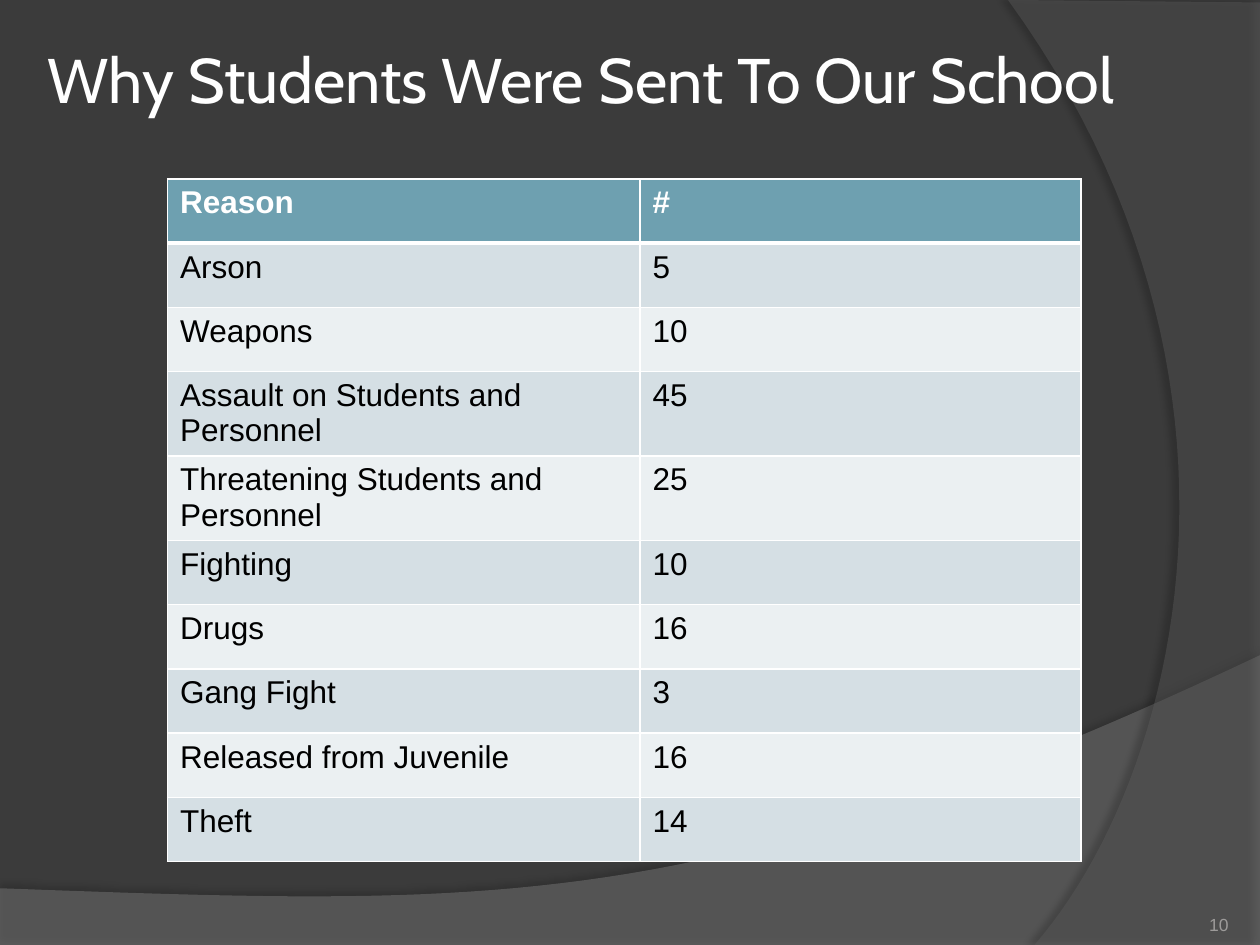
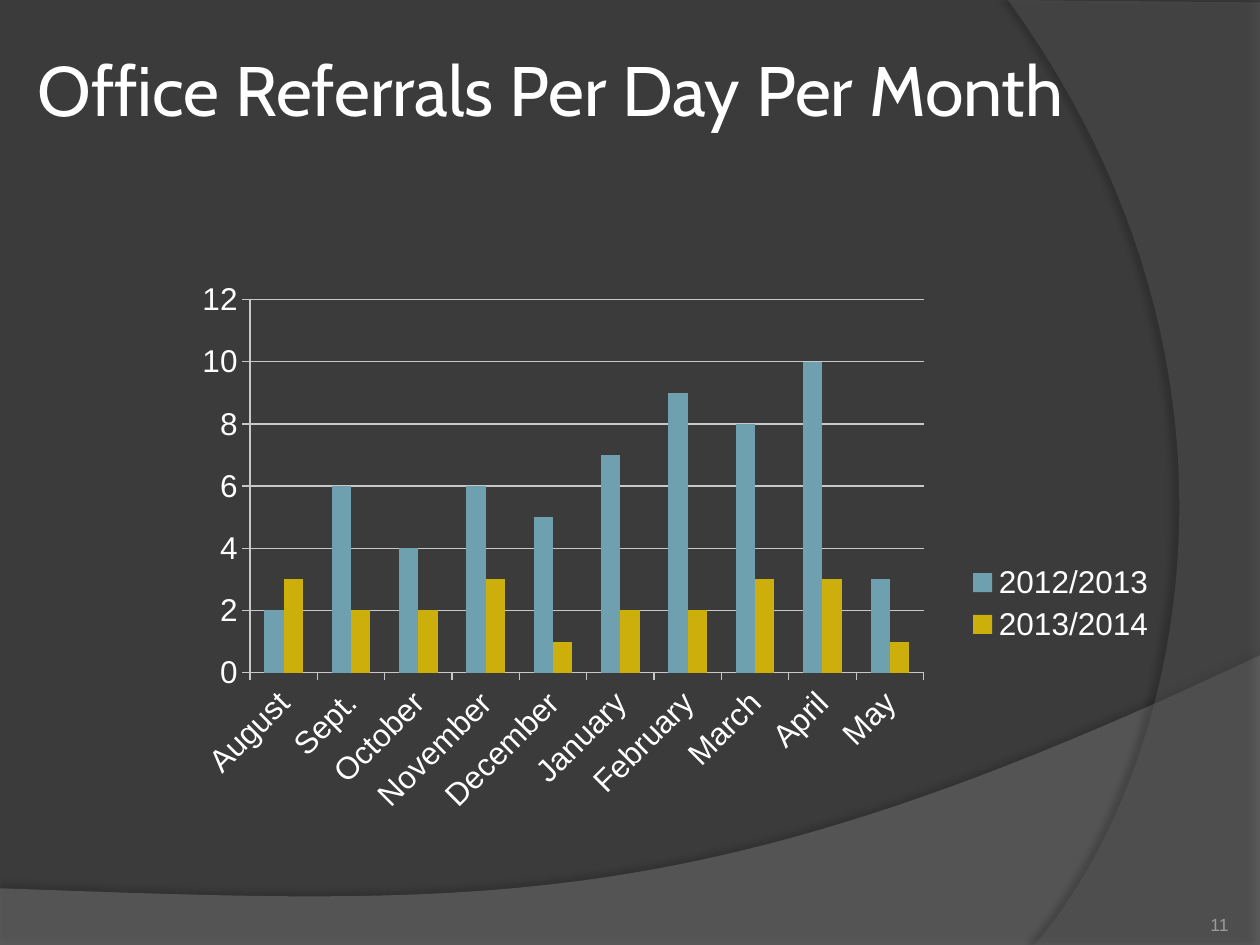
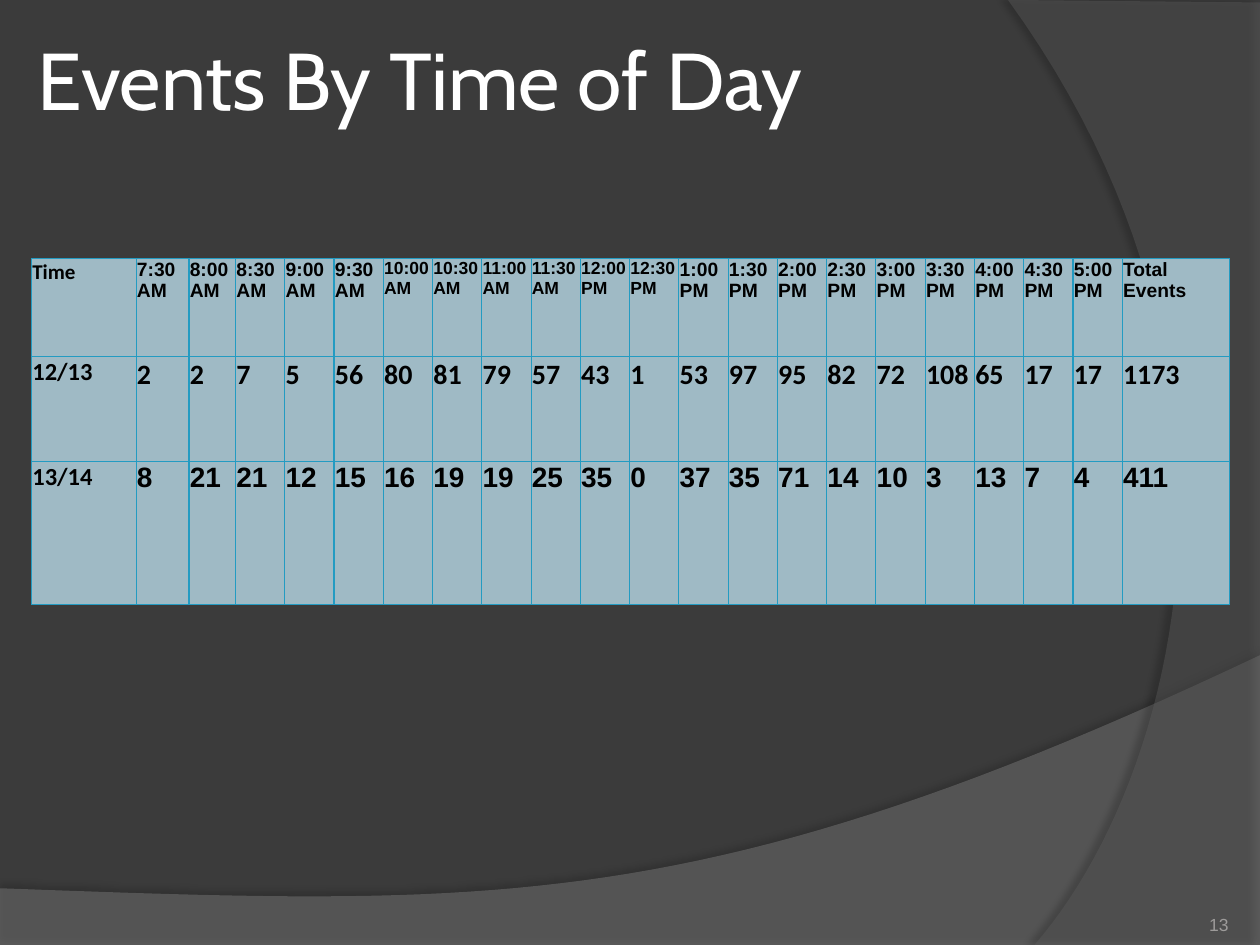
import lxml.etree
import pptx
import pptx.chart.data
import pptx.dml.color
import pptx.enum.chart
import pptx.enum.text
import pptx.oxml
import pptx.oxml.ns
import pptx.util

Inches = pptx.util.Inches
Pt = pptx.util.Pt
RGB = pptx.dml.color.RGBColor.from_string
qn = pptx.oxml.ns.qn
NAMESPACES = pptx.oxml.ns.nsdecls("a", "c")

COLORS = {
    "background": "3B3B3B", "floor": "7F7F7F", "side": "5E5E5E",
    "white": "FFFFFF", "black": "000000", "number": "9D9B9A",
    "teal": "6EA0B0", "gold": "CCAF0A", "grid": "C8C8C8",
    "band_dark": "D5DFE4", "band_light": "EBF0F2",
    "schedule": "9FBAC5", "schedule_line": "239BC2",
}


def write_text(frame, text, size=18, font="Arial", color="white", bold=False,
               align="LEFT", anchor="TOP", inset=None):
    """Fill a text frame; inset gives left, top, right and bottom in inches."""
    frame.word_wrap = True
    frame.vertical_anchor = getattr(pptx.enum.text.MSO_ANCHOR, anchor)
    if inset:
        (frame.margin_left, frame.margin_top,
         frame.margin_right, frame.margin_bottom) = [Inches(side) for side in inset]
    para = frame.paragraphs[0]
    para.alignment = getattr(pptx.enum.text.PP_ALIGN, align)
    span = para.add_run()
    span.text = text
    span.font.size = Pt(size)
    span.font.name = font
    span.font.bold = bold
    span.font.color.rgb = RGB(COLORS[color])


def paint_cell(cell, fill, line, width, **edges):
    """Set fill and borders; edges (L, R, T, B) override the border width."""
    cell.fill.solid()
    cell.fill.fore_color.rgb = RGB(COLORS[fill])
    properties = cell._tc.get_or_add_tcPr()
    for position, edge in enumerate("LRTB"):
        properties.insert(position, pptx.oxml.parse_xml(
            f'<a:ln{edge} {NAMESPACES} w="{Pt(edges.get(edge, width))}"><a:solidFill>'
            f'<a:srgbClr val="{COLORS[line]}"/></a:solidFill></a:ln{edge}>'))


deck = pptx.Presentation()
deck.slide_width, deck.slide_height = Inches(10), Inches(7.5)

# Each band: colour, opacity, shadow opacity, distance and angle,
# corners before the curve, Bezier control points (the first is the last corner)
bands = [
    ("floor", 45, 35, 3.5, 270, [(0, 7.05), (0, 7.51), (10, 7.51)],
     [(10, 5.2), (5.59, 7.29), (3.91, 7.19), (0, 7.05)]),
    ("side", 40, 45, 4, 180, [(10, 0.02), (10, 7.5)],
     [(8.21, 7.5), (9.35, 6.19), (10.18, 3), (8, 0)]),
]
titles = [
    ("Why Students Were Sent To Our School", 36, 0.33, 0, 9, "10"),
    ("Office Referrals Per Day Per Month", 40, 0.25, 0.08, 9, "11"),
    ("Events By Time of Day", 46, 0.25, 0, 8.17, "13"),
]
CURVE_STEPS = 48

pages = []
for title, size, left, top, width, number in titles:
    page = deck.slides.add_slide(deck.slide_layouts[6])
    pages.append(page)
    page.background.fill.solid()
    page.background.fill.fore_color.rgb = RGB(COLORS["background"])

    for color, opacity, shade, distance, angle, corners, controls in bands:
        curve = []
        for step in range(CURVE_STEPS + 1):
            t = step / CURVE_STEPS
            weights = ((1 - t) ** 3, 3 * t * (1 - t) ** 2, 3 * t * t * (1 - t), t ** 3)
            curve.append([sum(weight * point[axis] for weight, point in zip(weights, controls))
                          for axis in (0, 1)])
        # The builder keeps whole units only, so points are given in EMU
        outline = [(Inches(x), Inches(y)) for x, y in corners + curve]
        builder = page.shapes.build_freeform(*outline[0])
        builder.add_line_segments(outline[1:], close=True)
        band = builder.convert_to_shape()
        band.fill.solid()
        band.fill.fore_color.rgb = RGB(COLORS[color])
        band.line.fill.background()
        fill_color = band._element.spPr.find(qn("a:solidFill"))[0]
        lxml.etree.SubElement(fill_color, qn("a:alpha"), val=str(opacity * 1000))
        band._element.spPr.append(pptx.oxml.parse_xml(
            f'<a:effectLst {NAMESPACES}><a:outerShdw blurRad="{Pt(4)}" dist="{Pt(distance)}" '
            f'dir="{angle * 60000}" algn="ctr" rotWithShape="0">'
            f'<a:srgbClr val="{COLORS["black"]}"><a:alpha val="{shade * 1000}"/></a:srgbClr>'
            '</a:outerShdw></a:effectLst>'))

    box = page.shapes.add_textbox(Inches(left), Inches(top), Inches(width), Inches(1.25))
    write_text(box.text_frame, title, size=size, font="Cabin", anchor="MIDDLE", inset=[0.05] * 4)
    box = page.shapes.add_textbox(Inches(8.92), Inches(7.02), Inches(0.83), Inches(0.4))
    write_text(box.text_frame, number, size=10, color="number", align="RIGHT",
               anchor="BOTTOM", inset=[0] * 4)

reasons_page, referrals_page, events_page = pages

# Reasons
reasons = [
    ("Reason", "#"), ("Arson", "5"), ("Weapons", "10"),
    ("Assault on Students and Personnel", "45"),
    ("Threatening Students and Personnel", "25"),
    ("Fighting", "10"), ("Drugs", "16"), ("Gang Fight", "3"),
    ("Released from Juvenile", "16"), ("Theft", "14"),
]
table = reasons_page.shapes.add_table(
    len(reasons), 2, Inches(1.33), Inches(1.42), Inches(7.25), Inches(5.42)).table
table.first_row = table.horz_banding = False
table.columns[0].width, table.columns[1].width = Inches(3.75), Inches(3.5)
for row, entry in enumerate(reasons):
    table.rows[row].height = Inches(0.67 if "Personnel" in entry[0] else 0.51)
    header = row == 0
    fill = "teal" if header else ("band_dark" if row % 2 else "band_light")
    edges = {0: {"B": 3}, 1: {"T": 3}}.get(row, {})
    for column, text in enumerate(entry):
        cell = table.cell(row, column)
        write_text(cell.text_frame, text, color="white" if header else "black", bold=header)
        cell.margin_bottom = Inches(0.01)
        paint_cell(cell, fill, "white", 1, **edges)

# Referrals
data = pptx.chart.data.CategoryChartData()
data.categories = ["August", "Sept.", "October", "November", "December",
                   "January", "February", "March", "April", "May"]
data.add_series("2012/2013", [2, 6, 4, 6, 5, 7, 9, 8, 10, 3])
data.add_series("2013/2014", [3, 2, 2, 3, 1, 2, 2, 3, 3, 1])
chart = referrals_page.shapes.add_chart(
    pptx.enum.chart.XL_CHART_TYPE.COLUMN_CLUSTERED,
    Inches(0.83), Inches(2.08), Inches(8.42), Inches(4.44), data).chart
chart.has_title = False
chart.font.size = Pt(18)
chart.font.name = "Arial"
chart.font.color.rgb = RGB(COLORS["white"])
plot = chart.plots[0]
plot.gap_width, plot.overlap, plot.vary_by_categories = 150, 0, False
for series, color in zip(plot.series, ("teal", "gold")):
    series.invert_if_negative = False
    series.format.fill.solid()
    series.format.fill.fore_color.rgb = RGB(COLORS[color])

value_axis, category_axis = chart.value_axis, chart.category_axis
value_axis.minimum_scale, value_axis.maximum_scale, value_axis.major_unit = 0, 12, 2
value_axis.has_major_gridlines = True
for axis in (value_axis, category_axis):
    axis.major_tick_mark = pptx.enum.chart.XL_TICK_MARK.OUTSIDE
for part in (value_axis, category_axis, value_axis.major_gridlines):
    part.format.line.color.rgb = RGB(COLORS["grid"])
    part.format.line.width = Pt(0.75)

chart.has_legend = True
chart.legend.position = pptx.enum.chart.XL_LEGEND_POSITION.RIGHT
chart.legend.include_in_layout = False
for parent, position, target, places in (
        (chart._chartSpace.chart.plotArea, 0, '<c:layoutTarget val="inner"/>',
         {"x": 0.137, "y": 0.067, "w": 0.635, "h": 0.667}),
        (chart.legend._element, 1, "", {"x": 0.809, "y": 0.53})):
    for layout in parent.findall(qn("c:layout")):
        parent.remove(layout)
    modes = "".join(f'<c:{key}Mode val="edge"/>' for key in "xy")
    values = "".join(f'<c:{key} val="{value}"/>' for key, value in places.items())
    parent.insert(position, pptx.oxml.parse_xml(
        f'<c:layout {NAMESPACES}><c:manualLayout>{target}{modes}{values}'
        '</c:manualLayout></c:layout>'))

# Events, in half hours from 7:30 AM to 5:00 PM
times = [f"{(half // 2 - 1) % 12 + 1}:{half % 2 * 30:02d} {'AM' if half < 24 else 'PM'}"
         for half in range(15, 35)]
events = [
    ["Time", *times, "Total Events"],
    ["12/13", 2, 2, 7, 5, 56, 80, 81, 79, 57, 43, 1, 53, 97, 95, 82, 72, 108, 65, 17, 17, 1173],
    ["13/14", 8, 21, 21, 12, 15, 16, 19, 19, 25, 35, 0, 37, 35, 71, 14, 10, 3, 13, 7, 4, 411],
]
table = events_page.shapes.add_table(
    3, len(events[0]), Inches(0.25), Inches(2.05), Inches(9.51), Inches(2.75)).table
table.first_row = table.horz_banding = False
for column, width in zip(table.columns, [0.83, 0.42, 0.37] + [7.04 / 18] * 18 + [0.85]):
    column.width = Inches(width)
for row, height in enumerate([0.78, 0.83, 1.14]):
    table.rows[row].height = Inches(height)
    for column, value in enumerate(events[row]):
        text = str(value)
        if column == 0:
            size = 12 if row == 0 else 14
        elif row == 0:
            size = 10 if len(text) == len("10:00 AM") else 11
        else:
            size = 16
        cell = table.cell(row, column)
        write_text(cell.text_frame, text, size=size, color="black", bold=True,
                   font="Calibri" if column == 0 or row == 1 else "Arial")
        cell.margin_left = cell.margin_top = cell.margin_right = Pt(0.5)
        cell.margin_bottom = 0
        paint_cell(cell, "schedule", "schedule_line", 0.75)

deck.save("out.pptx")
